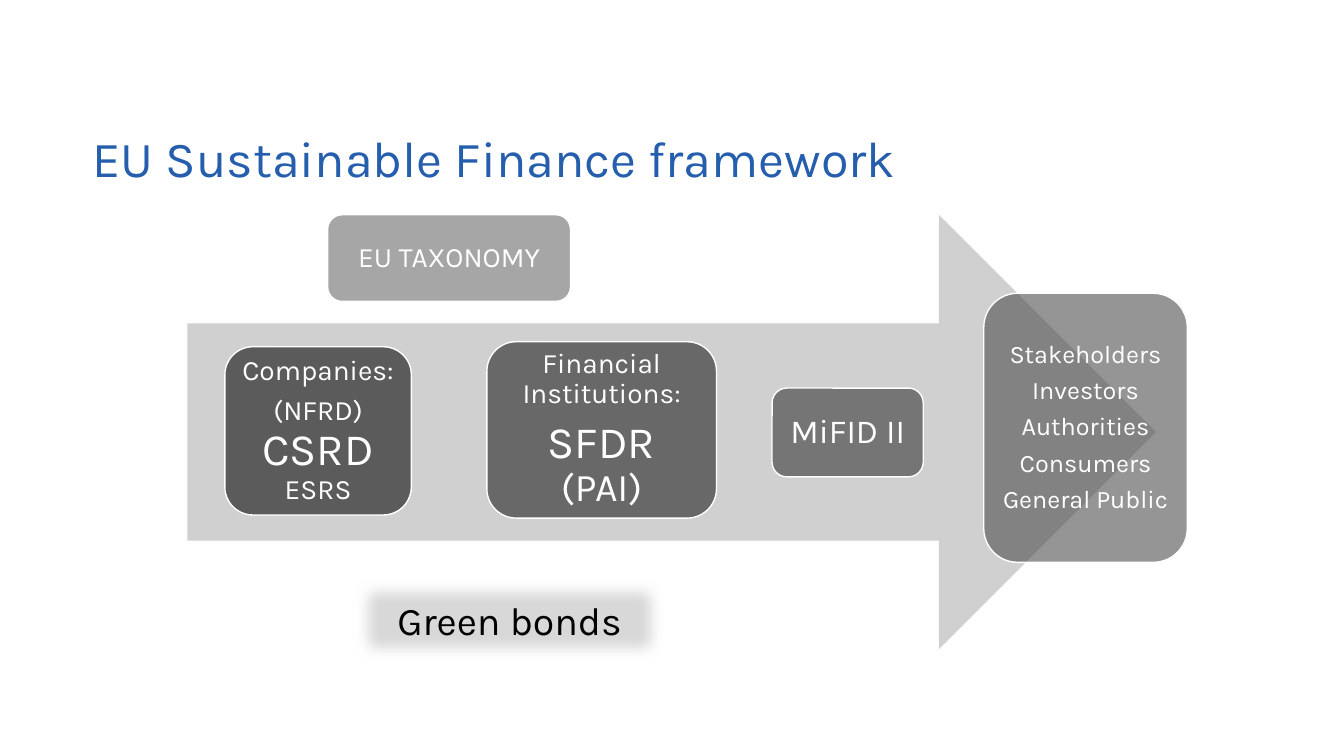
from lxml.etree import SubElement
from pptx import Presentation
from pptx.dml.color import RGBColor
from pptx.enum.shapes import MSO_SHAPE as Shape
from pptx.enum.text import MSO_ANCHOR as Anchor, PP_ALIGN as Align
from pptx.oxml.ns import qn
from pptx.util import Pt

FONT = "Karla"
WHITE, BLACK, BLUE = "FFFFFF", "000000", "255EAD"
ARROW_GREY, BOX_GREY, BOND_GREY = "D0D0D0", "4F4F4F", "D9D9D9"

# Text, left and top within the arrow, width, height, opacity %, inset.
# Each text is a list of paragraphs, each made of (words, size) runs.
FRAMEWORK = [
    ([[("Companies:", 20)], [("(NFRD) ", 20), ("CSRD", 32)], [("ESRS", 20)]],
     26.7, 94.3, 133.2, 120.2, 90, 6),
    ([[("Financial Institutions:", 20)], [("SFDR ", 32), ("(PAI)", 28)]],
     213.9, 90.7, 164, 126, 80, 6),
    ([[("MiFID II", 24)]], 417.6, 123.8, 108, 63.4, 70, 7.2),
    ([[(group, 18)] for group in ("Stakeholders", "Investors", "Authorities",
                                  "Consumers", "General Public")],
     568.8, 56.1, 145.4, 192.2, 60, 5.4),
    ([[("EU TAXONOMY", 20)]], 100.1, 0, 173.5, 61.9, 50, 6),
]


def colour(value):
    return RGBColor.from_string(value)


def add_block(slide, kind, box, fill):
    block = slide.shapes.add_shape(kind, *map(Pt, box))
    block.shadow.inherit = False
    block.fill.solid()
    block.fill.fore_color.rgb = colour(fill)
    block.line.fill.background()
    return block


def write(frame, paragraphs, ink, anchor, align, insets, line_spacing=0.9):
    frame.word_wrap = True
    frame.vertical_anchor = anchor
    (frame.margin_left, frame.margin_top,
     frame.margin_right, frame.margin_bottom) = map(Pt, insets)
    for number, runs in enumerate(paragraphs):
        line = frame.add_paragraph() if number else frame.paragraphs[0]
        line.alignment = align
        line.line_spacing = line_spacing
        for words, size in runs:
            run = line.add_run()
            run.text = words
            run.font.name = FONT
            run.font.size = Pt(size)
            run.font.color.rgb = colour(ink)


def add_title(slide, box):
    title = slide.shapes.add_textbox(*map(Pt, box))
    write(title.text_frame, [[("EU Sustainable Finance framework", 36)]],
          BLUE, Anchor.BOTTOM, Align.LEFT, (0, 3.6, 7.2, 3.6))


def add_framework(slide, box):
    left, top = box[:2]
    add_block(slide, Shape.RIGHT_ARROW, box, ARROW_GREY)
    for paragraphs, x, y, width, height, opacity, inset in FRAMEWORK:
        step = add_block(slide, Shape.ROUNDED_RECTANGLE,
                         (left + x, top + y, width, height), BOX_GREY)
        step.line.color.rgb = colour(WHITE)
        step.line.width = Pt(1)
        # Let the arrow show through
        tint = step.fill._xPr.find(qn("a:solidFill"))[0]
        SubElement(tint, qn("a:alpha"), val=str(opacity * 1000))
        write(step.text_frame, paragraphs, WHITE, Anchor.MIDDLE, Align.CENTER,
              [inset] * 4)
        # Gap of 35% of the text size, except between CSRD and ESRS
        for line in step.text_frame.paragraphs:
            if not line.text.startswith("(NFRD)"):
                line.space_after = Pt(0.35 * line.runs[0].font.size.pt)


def add_green_bonds(slide, box):
    bonds = add_block(slide, Shape.RECTANGLE, box, BOND_GREY)
    # Soft edge
    effects = bonds._element.spPr.find(qn("a:effectLst"))
    SubElement(effects, qn("a:softEdge"), rad=str(Pt(12.5)))
    write(bonds.text_frame, [[("Green bonds", 28)]], BLACK, Anchor.MIDDLE,
          Align.CENTER, (7.2, 3.6, 7.2, 3.6), 1.0)


def main():
    deck = Presentation()
    deck.slide_width, deck.slide_height = Pt(960), Pt(540)
    slide = deck.slides.add_slide(deck.slide_layouts[6])
    add_title(slide, (66.2, 81.4, 745.2, 56.9))
    add_framework(slide, (133.9, 153.4, 692, 310.3))
    add_green_bonds(slide, (247.7, 407.5, 232.6, 70.6))
    deck.save("out.pptx")


if __name__ == "__main__":
    main()
